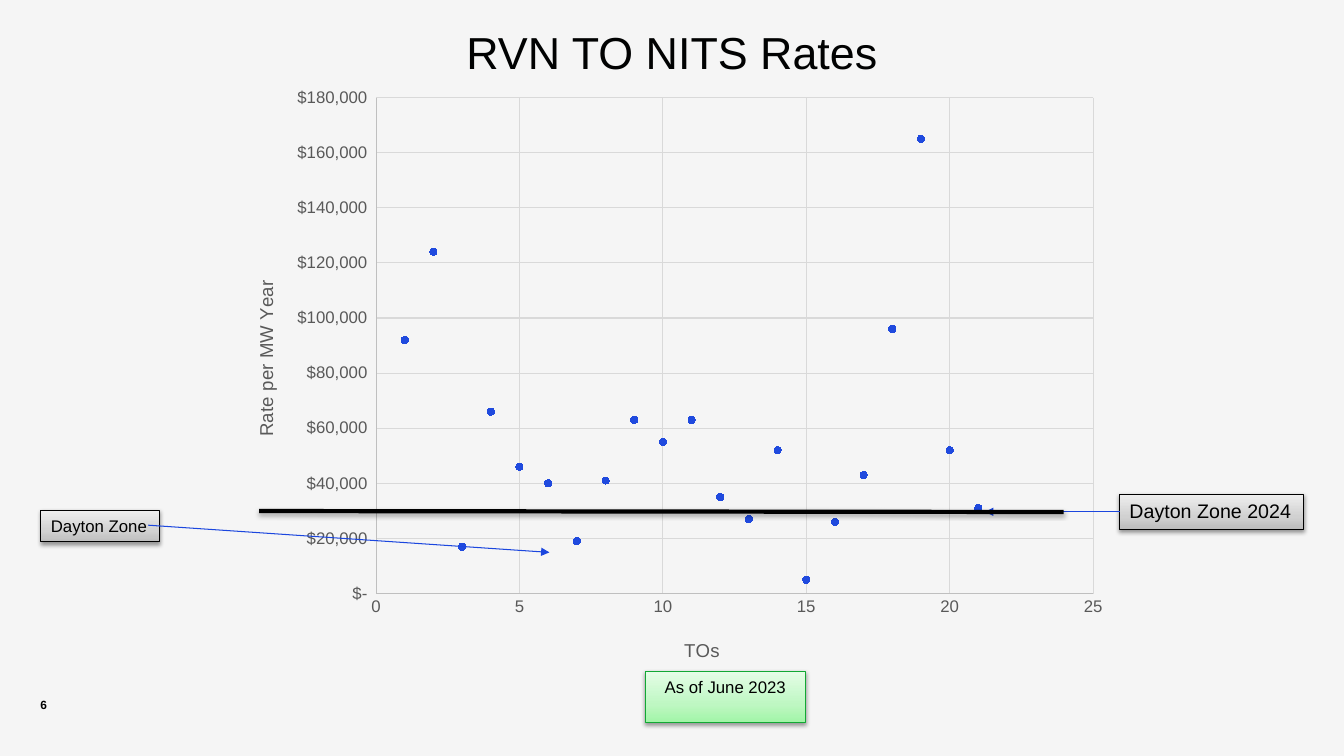
from copy import deepcopy
from lxml.etree import SubElement as Sub
from pptx import Presentation
from pptx.chart.data import XyChartData
from pptx.dml.color import RGBColor as RGB
from pptx.enum.chart import XL_CHART_TYPE as Kind, XL_MARKER_STYLE as Mark, XL_TICK_MARK as Tick
from pptx.enum.shapes import MSO_CONNECTOR as Link, MSO_SHAPE as Form
from pptx.enum.text import MSO_ANCHOR as Anchor, PP_ALIGN as Align
from pptx.oxml import parse_xml
from pptx.oxml.ns import nsdecls, qn
from pptx.util import Inches, Pt

HUE = {"back": "F5F5F5", "ink": "000000", "title": "010202", "text": "595959", "axis": "BFBFBF",
       "grid": "D9D9D9", "dot": "204ADE", "arrow": "1B46DE", "leaf": "12A834"}
GRAY = ["BDBDBD", "D1D1D1", "EEEEEE"]
GREEN = ["A1F5A7", "BEF7C2", "E5FDE7"]
FONT = "Arial"

deck = Presentation()
deck.slide_width, deck.slide_height = Inches(13.33), Inches(7.5)
# The grid has 100 columns and 100 rows
COL, ROW = deck.slide_width / 100, deck.slide_height / 100
slide = deck.slides.add_slide(deck.slide_layouts[6])
slide.background.fill.solid()
slide.background.fill.fore_color.rgb = RGB.from_string(HUE["back"])


def write(frame, text, size, hue="ink", bold=False, align=Align.LEFT):
    para = frame.paragraphs[0]
    para.alignment = align
    run = para.add_run()
    run.text = text
    font = run.font
    font.name, font.size, font.bold = FONT, Pt(size), bold
    font.color.rgb = RGB.from_string(HUE[hue])


def cast(shape, alpha=0):
    """Give the shape a soft drop shadow of this opacity, or none at 0."""
    props = shape._element.spPr
    for old in props.findall(qn("a:effectLst")):
        props.remove(old)
    effects = Sub(props, qn("a:effectLst"))
    if alpha:
        effects.append(parse_xml(
            f'<a:outerShdw {nsdecls("a")} blurRad="{Pt(3.1)}" dist="{Pt(1.7)}" dir="5400000" '
            f'rotWithShape="0"><a:srgbClr val="{HUE["ink"]}"><a:alpha val="{alpha * 1000}"/>'
            '</a:srgbClr></a:outerShdw>'))


# Title and slide number
for text, x, y, w, h, size, hue, bold, align, anchor in [
        ("RVN TO NITS Rates", 3, 3.33, 94, 7.2, 32, "title", False, Align.CENTER, Anchor.TOP),
        ("6", 3, 92.27, 6.45, 1.87, 8.5, "ink", True, Align.LEFT, Anchor.BOTTOM)]:
    frame = slide.shapes.add_textbox(*map(int, (x * COL, y * ROW, w * COL, h * ROW))).text_frame
    frame.word_wrap, frame.vertical_anchor = True, anchor
    frame.margin_left = frame.margin_right = frame.margin_top = frame.margin_bottom = 0
    write(frame, text, size, hue, bold, align)

# Scatter chart, one dot for each owner, in thousands of dollars
RATES = [92, 124, 17, 66, 46, 40, 19, 41, 63, 55, 63, 35, 27, 52, 5, 26, 43, 96, 165, 52, 31]
data = XyChartData()
points = data.add_series("Series 1")
for num, rate in enumerate(RATES, 1):
    points.add_data_point(num, rate * 1000)
area = map(int, (16.65 * COL, 10.53 * ROW, 66.69 * COL, 79.07 * ROW))
chart = slide.shapes.add_chart(Kind.XY_SCATTER, *area, data).chart
chart.has_legend = chart.has_title = False
chart.font.name, chart.font.size = FONT, Pt(10)
chart.font.color.rgb = RGB.from_string(HUE["ink"])
chart.plots[0].vary_by_categories = False
dots = chart.plots[0].series[0]
dots.smooth = False
dots.format.line.fill.background()
dots.marker.style, dots.marker.size = Mark.CIRCLE, 5
for fill in (dots.marker.format.fill, dots.marker.format.line.fill):
    fill.solid()
    fill.fore_color.rgb = RGB.from_string(HUE["dot"])

MONEY = '_("$"* #,##0_);_("$"* \\(#,##0\\);_("$"* "-"_);_(@_)'
for axis, name, top, step, style, turn in [
        (chart.category_axis, "TOs", 25, 5, "General", 0),
        (chart.value_axis, "Rate per MW Year", 180000, 20000, MONEY, -90)]:
    axis.minimum_scale, axis.maximum_scale, axis.major_unit = 0, top, step
    axis.major_tick_mark = axis.minor_tick_mark = Tick.NONE
    axis.has_major_gridlines = True
    for line, hue in ((axis.format.line, "axis"), (axis.major_gridlines.format.line, "grid")):
        line.color.rgb, line.width = RGB.from_string(HUE[hue]), Pt(0.75)
    labels = axis.tick_labels
    labels.number_format, labels.number_format_is_linked = style, False
    labels.font.name, labels.font.size = FONT, Pt(12)
    labels.font.color.rgb = RGB.from_string(HUE["text"])
    frame = axis.axis_title.text_frame
    write(frame, name, 13.3, "text", align=Align.CENTER)
    body = frame._txBody.bodyPr
    body.set("rot", str(turn * 60000))
    body.set("vert", "horz")

# Places of the plot and the axis titles, as shares of the chart
for host, spot, place in [
        (chart._chartSpace.chart.plotArea, 0, {"x": 0.17, "y": 0.03, "w": 0.8, "h": 0.83}),
        (chart.category_axis.axis_title._element, 1, {"x": 0.51, "y": 0.93}),
        (chart.value_axis.axis_title._element, 1, {"x": 0.03, "y": 0.33})]:
    layout = host.find(qn("c:layout"))
    if layout is None:
        layout = parse_xml(f'<c:layout {nsdecls("c")}/>')
        host.insert(spot, layout)
    manual = Sub(layout, qn("c:manualLayout"))
    if "w" in place:
        Sub(manual, qn("c:layoutTarget")).set("val", "inner")
    for key in "xy":
        Sub(manual, qn(f"c:{key}Mode")).set("val", "edge")
    for key, share in place.items():
        Sub(manual, qn(f"c:{key}")).set("val", str(share))

# Callout boxes
boxes = {}
for text, x, y, w, h, size, ramp, edge, align in [
        ("Dayton Zone", 3.05, 67.5, 8.85, 4.2, 12, GRAY, "ink", Align.LEFT),
        ("As of June 2023", 48, 88.8, 11.95, 6.8, 12, GREEN, "leaf", Align.CENTER),
        ("Dayton Zone 2024", 83.3, 65.4, 13.7, 4.6, 14, GRAY, "ink", Align.LEFT)]:
    box = boxes[text] = slide.shapes.add_shape(
        Form.RECTANGLE, *map(int, (x * COL, y * ROW, w * COL, h * ROW)))
    box.fill.gradient()
    box.fill.gradient_angle = 90
    stops = box._element.spPr.find(".//" + qn("a:gsLst"))
    stops.append(deepcopy(stops[0]))
    for stop, share, shade in zip(box.fill.gradient_stops, (0, 0.35, 1), ramp):
        stop.position, stop.color.rgb = share, RGB.from_string(shade)
    box.line.color.rgb, box.line.width = RGB.from_string(HUE[edge]), Pt(0.75)
    cast(box, 38)
    box.text_frame.word_wrap, box.text_frame.vertical_anchor = True, Anchor.TOP
    write(box.text_frame, text, size, align=align)

# Arrows to the dots, and the level line
for x1, y1, x2, y2, hue, width, alpha, start in [
        (11.03, 69.47, 40.88, 73.07, "arrow", 0.75, 0, None),
        (83.3, 67.7, 73.29, 67.7, "arrow", 0.75, 0, "Dayton Zone 2024"),
        (19.28, 67.6, 79.14, 67.73, "ink", 3, 35, None)]:
    line = slide.shapes.add_connector(
        Link.STRAIGHT, *map(int, (x1 * COL, y1 * ROW, x2 * COL, y2 * ROW)))
    if start:
        line.begin_connect(boxes[start], 1)
    line.line.color.rgb, line.line.width = RGB.from_string(HUE[hue]), Pt(width)
    if hue == "arrow":
        Sub(line.line._get_or_add_ln(), qn("a:tailEnd")).set("type", "triangle")
    cast(line, alpha)

deck.save("out.pptx")
